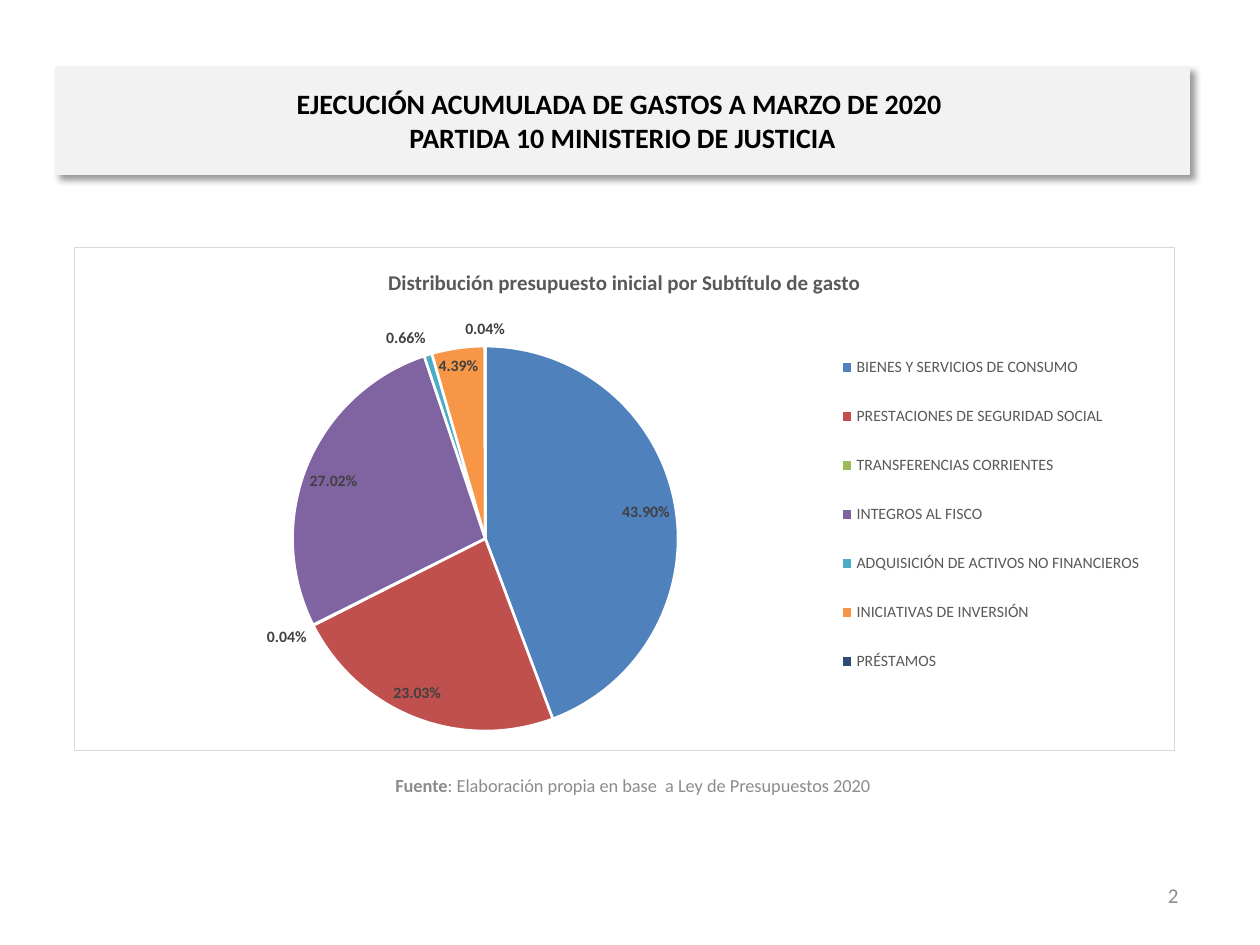
from lxml import etree
from pptx import Presentation
from pptx.chart.data import CategoryChartData
from pptx.dml.color import RGBColor
from pptx.enum.chart import XL_CHART_TYPE, XL_LABEL_POSITION, XL_LEGEND_POSITION
from pptx.enum.text import MSO_ANCHOR, MSO_AUTO_SIZE, PP_ALIGN
from pptx.oxml import parse_xml
from pptx.oxml.ns import nsdecls, qn
from pptx.util import Pt

PIE = XL_CHART_TYPE.PIE
BEST_FIT = XL_LABEL_POSITION.BEST_FIT
RIGHT_LEGEND = XL_LEGEND_POSITION.RIGHT
CENTER, RIGHT = PP_ALIGN.CENTER, PP_ALIGN.RIGHT
MIDDLE = MSO_ANCHOR.MIDDLE

EMU_PER_PX = 914400 // 126
FONT = "Calibri"
COLORS = {
    "title": "000000", "band": "F2F2F2", "muted": "8C8C8C", "white": "FFFFFF",
    "border": "D9D9D9", "legend": "595959", "label": "404040",
}

TITLE_LINES = ["EJECUCIÓN ACUMULADA DE GASTOS A MARZO DE 2020 ",
               "PARTIDA 10 MINISTERIO DE JUSTICIA"]
CHART_TITLE = "Distribución presupuesto inicial por Subtítulo de gasto"
SLICES = [
    ("BIENES Y SERVICIOS DE CONSUMO", 0.4390, "4F81BD"),
    ("PRESTACIONES DE SEGURIDAD SOCIAL", 0.2303, "C0504D"),
    ("TRANSFERENCIAS CORRIENTES", 0.0004, "9BBB59"),
    ("INTEGROS AL FISCO", 0.2702, "8064A2"),
    ("ADQUISICIÓN DE ACTIVOS NO FINANCIEROS", 0.0066, "4BACC6"),
    ("INICIATIVAS DE INVERSIÓN", 0.0439, "F79646"),
    ("PRÉSTAMOS", 0.0004, "2C4D75"),
]
SOURCE = [("Fuente", True),
          (": Elaboración propia en base  a Ley de Presupuestos 2020", False)]
PAGE = [("2", False)]

TITLE_BOX = (56, 67, 1133, 107)
CHART_BOX = (74, 247, 1101, 504)
PIE_BOX = (292, 346, 386, 386)
LEGEND_BOX = (824, 327, 335, 375)
SOURCE_BOX = (54, 760, 1158, 51)
PAGE_BOX = (897, 870, 294, 51)


def px(*values):
    return [v * EMU_PER_PX for v in values]


def rgb(name):
    return RGBColor.from_string(COLORS.get(name, name))


def style(font, size, color, bold=False):
    font.name, font.size, font.bold = FONT, Pt(size), bold
    font.color.rgb = rgb(color)


def add_text(slide, box, runs, size, align):
    tf = slide.shapes.add_textbox(*px(*box)).text_frame
    tf.word_wrap = True
    tf.vertical_anchor = MIDDLE
    p = tf.paragraphs[0]
    p.alignment = align
    for text, bold in runs:
        r = p.add_run()
        r.text = text
        style(r.font, size, "muted", bold)


def add_shadow(sp):
    sp.shadow.inherit = False
    effects = sp._element.spPr.find(qn("a:effectLst"))
    effects.append(parse_xml(
        f'<a:outerShdw {nsdecls("a")} blurRad="{Pt(4)}" dist="{Pt(3)}" dir="2700000" '
        'algn="tl" rotWithShape="0"><a:srgbClr val="000000"><a:alpha val="40000"/>'
        '</a:srgbClr></a:outerShdw>'))


def set_layout(parent, index, box, inner=False):
    """Place a chart part by hand, as fractions of the chart area."""
    for old in parent.findall(qn("c:layout")):
        parent.remove(old)
    left, top, width, height = CHART_BOX
    x, y, w, h = box
    values = {"x": (x - left) / width, "y": (y - top) / height,
              "w": w / width, "h": h / height}
    layout = etree.Element(qn("c:layout"))
    manual = etree.SubElement(layout, qn("c:manualLayout"))
    if inner:
        etree.SubElement(manual, qn("c:layoutTarget"), val="inner")
    for mode in ("xMode", "yMode"):
        etree.SubElement(manual, qn("c:" + mode), val="edge")
    for name, value in values.items():
        etree.SubElement(manual, qn("c:" + name), val=f"{value:.3f}")
    parent.insert(index, layout)


def add_title(slide):
    sp = slide.shapes.title
    sp.left, sp.top, sp.width, sp.height = px(*TITLE_BOX)
    sp.fill.solid()
    sp.fill.fore_color.rgb = rgb("band")
    sp.line.color.rgb = rgb("band")
    sp.line.width = Pt(0.75)
    add_shadow(sp)
    tf = sp.text_frame
    tf.word_wrap = True
    tf.auto_size = MSO_AUTO_SIZE.NONE
    tf.vertical_anchor = MIDDLE
    p = tf.paragraphs[0]
    p.alignment = CENTER
    for i, line in enumerate(TITLE_LINES):
        if i:
            p.add_line_break()
        r = p.add_run()
        r.text = line
        style(r.font, 16, "title", True)


def add_pie(slide):
    data = CategoryChartData(number_format="0.00%")
    data.categories = [name for name, _, _ in SLICES]
    data.add_series("Series 1", [value for _, value, _ in SLICES])
    chart = slide.shapes.add_chart(PIE, *px(*CHART_BOX), data).chart
    style(chart.font, 10, "title")

    chart.has_title = True
    r = chart.chart_title.text_frame.paragraphs[0].add_run()
    r.text = CHART_TITLE
    style(r.font, 12, "legend", True)

    chart.has_legend = True
    legend = chart.legend
    legend.position = RIGHT_LEGEND
    legend.include_in_layout = False
    style(legend.font, 9, "legend")
    set_layout(legend._element, 1, LEGEND_BOX)

    plot = chart.plots[0]
    plot.vary_by_categories = True
    series = plot.series[0]
    for i, (_, _, color) in enumerate(SLICES):
        fmt = series.points[i].format
        fmt.fill.solid()
        fmt.fill.fore_color.rgb = rgb(color)
        fmt.line.color.rgb = rgb("white")
        fmt.line.width = Pt(1.5)
    labels = series.data_labels
    labels.show_value = True
    labels.show_percentage = False
    labels.number_format = "0.00%"
    labels.number_format_is_linked = False
    labels.position = BEST_FIT
    style(labels.font, 9, "label", True)

    chart_xml = chart._chartSpace.find(qn("c:chart"))
    set_layout(chart_xml.find(qn("c:plotArea")), 0, PIE_BOX, inner=True)
    chart_xml.addnext(parse_xml(
        f'<c:spPr {nsdecls("c", "a")}><a:solidFill><a:srgbClr val="{COLORS["white"]}"/>'
        f'</a:solidFill><a:ln w="{Pt(0.75)}"><a:solidFill>'
        f'<a:srgbClr val="{COLORS["border"]}"/></a:solidFill></a:ln></c:spPr>'))


def main():
    prs = Presentation()
    prs.slide_width, prs.slide_height = px(1260, 945)
    slide = prs.slides.add_slide(prs.slide_layouts[5])
    add_title(slide)
    add_pie(slide)
    add_text(slide, SOURCE_BOX, SOURCE, 10.5, CENTER)
    add_text(slide, PAGE_BOX, PAGE, 12, RIGHT)
    prs.save("out.pptx")


if __name__ == "__main__":
    main()
